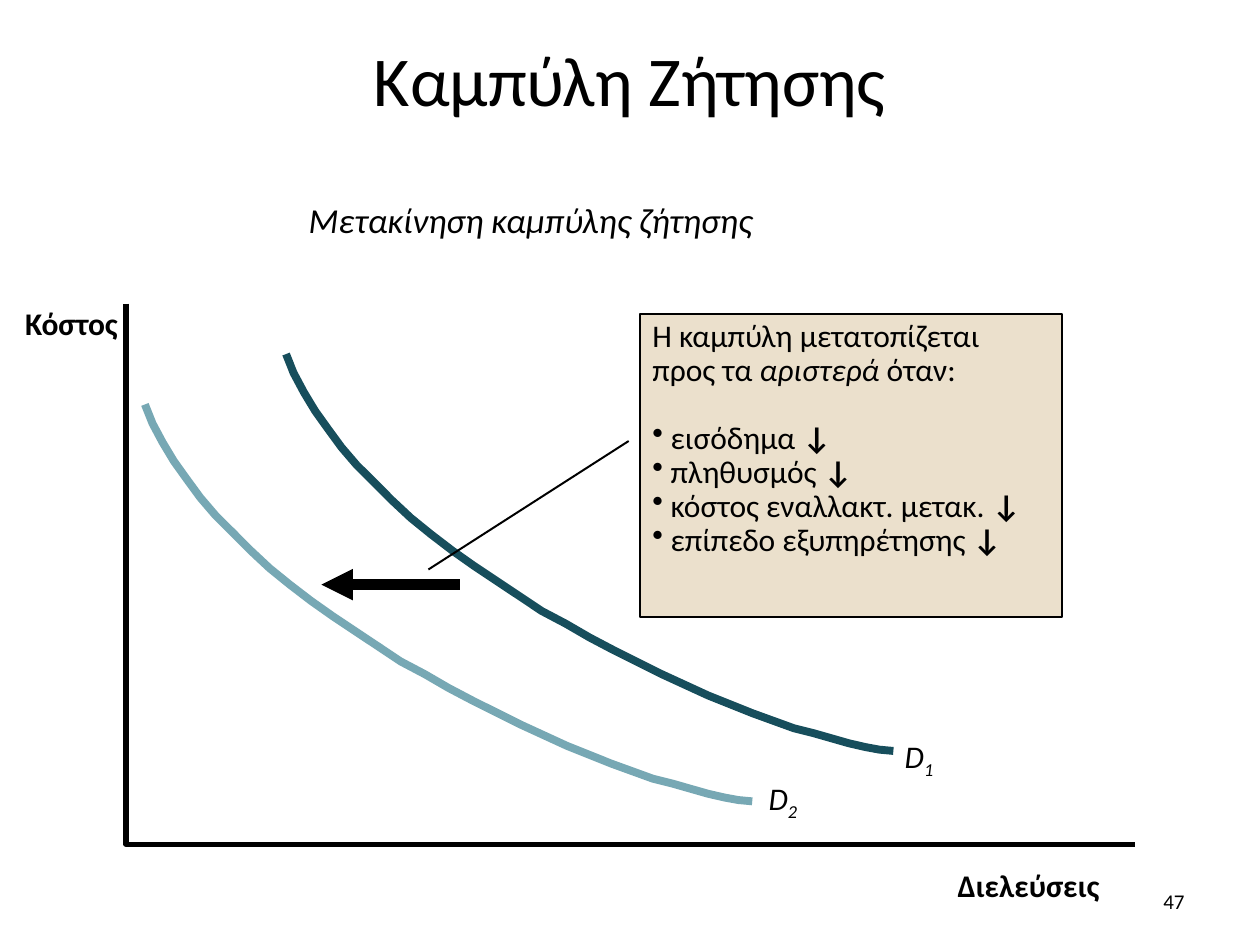
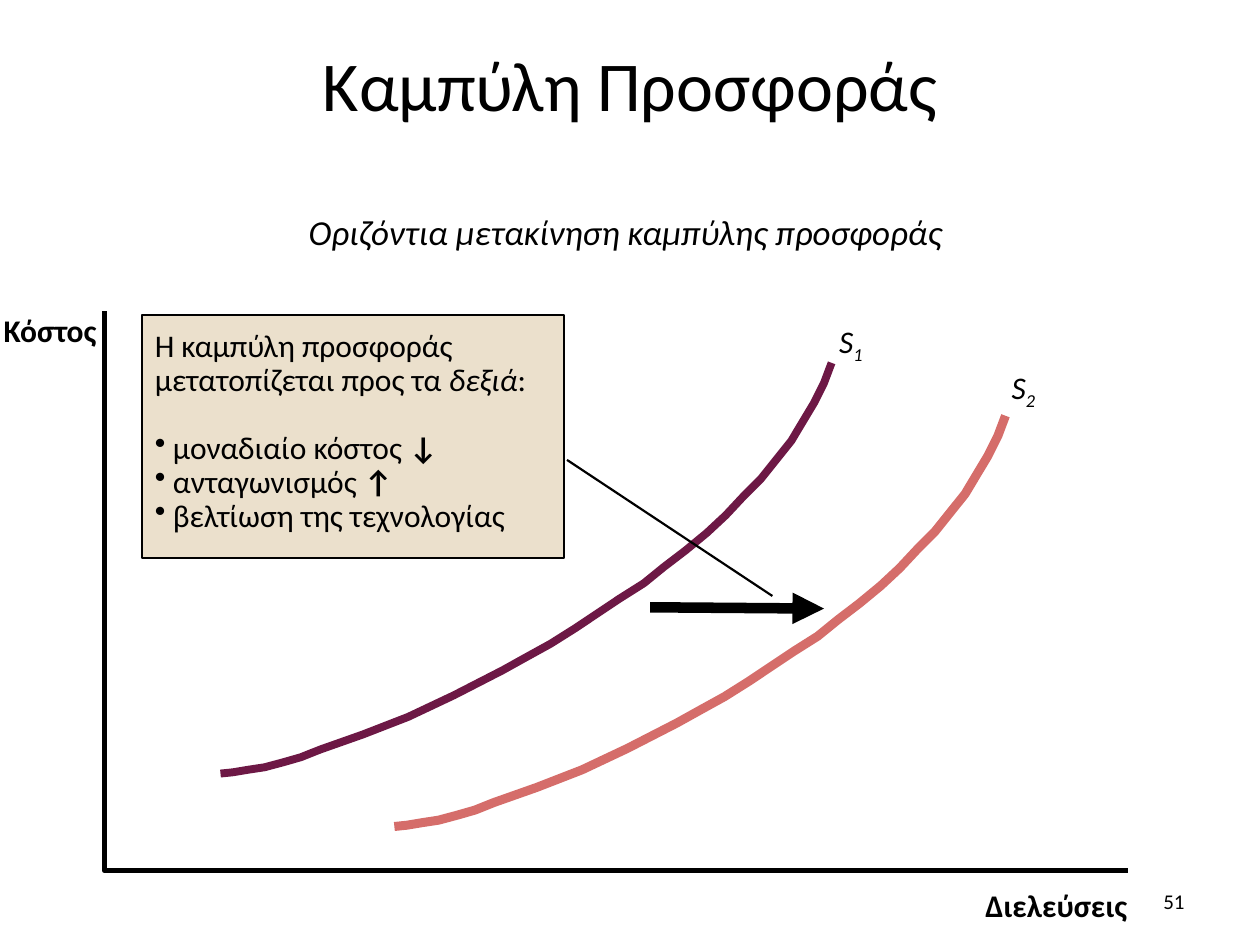
import pptx
import pptx.util
import pptx.dml.color
import pptx.enum.shapes
import pptx.enum.text
import pptx.oxml.ns
import lxml.etree

COLS, ROWS = 100, 75
FONT = "Calibri"
COLORS = {
    "ink": "000000",
    "note": "EBE0CC",
    "demand": "174E5C",
    "demand_shifted": "77A8B4",
    "supply": "6D1845",
    "supply_shifted": "D56D6A",
}
ALIGN = pptx.enum.text.PP_ALIGN
ANCHOR = pptx.enum.text.MSO_ANCHOR

# Curve outlines as (column, row) points
DEMAND = [
    (70.9, 59.6), (69.8, 59.5), (68.7, 59.3), (67.4, 59), (66, 58.6),
    (64.6, 58.2), (63, 57.8), (59.7, 56.6), (56.2, 55.2), (52.5, 53.5),
    (48.7, 51.6), (46.8, 50.6), (44.9, 49.5), (43, 48.5), (41.2, 47.3),
    (39.4, 46.1), (37.6, 44.9), (35.9, 43.7), (34.2, 42.4), (32.6, 41.1),
    (31.1, 39.7), (29.7, 38.3), (28.3, 36.9), (27.1, 35.5), (26, 34),
    (25, 32.6), (24.1, 31.1), (23.3, 29.6), (22.7, 28.1),
]
SUPPLY = [
    (17.5, 61.4), (18.5, 61.3), (19.7, 61.1), (21, 60.9), (22.5, 60.5),
    (23.9, 60.1), (25.4, 59.5), (28.8, 58.3), (32.4, 56.9), (36, 55.2),
    (39.9, 53.2), (41.7, 52.2), (43.7, 51.1), (45.6, 49.9), (47.4, 48.7),
    (49.2, 47.5), (51.1, 46.3), (52.7, 45), (54.4, 43.7), (56.1, 42.3),
    (57.6, 40.9), (59, 39.4), (60.4, 38), (61.6, 36.5), (62.8, 35),
    (63.7, 33.5), (64.6, 32), (65.4, 30.4), (66, 28.8),
]


def rgb(name):
    return pptx.dml.color.RGBColor.from_string(COLORS[name])


def sub(parent, tag, **attrs):
    return lxml.etree.SubElement(parent, pptx.oxml.ns.qn(tag), **attrs)


def add_run(p, text, size=18, bold=False, italic=False, subscript=False):
    r = p.add_run()
    r.text = text
    r.font.name, r.font.size = FONT, pptx.util.Pt(size)
    r.font.bold, r.font.italic = bold, italic
    r.font.color.rgb = rgb("ink")
    if subscript:
        r._r.get_or_add_rPr().set("baseline", "-25000")


class Deck:
    def __init__(self):
        self.prs = pptx.Presentation()
        self.prs.slide_width = pptx.util.Inches(10)
        self.prs.slide_height = pptx.util.Inches(7.5)
        self.s = None

    def x(self, cols):
        return round(self.prs.slide_width * cols / COLS)

    def y(self, rows):
        return round(self.prs.slide_height * rows / ROWS)

    def box(self, left, top, width, height):
        return self.x(left), self.y(top), self.x(width), self.y(height)

    def text(self, text, at, align=ALIGN.LEFT, anchor=ANCHOR.TOP,
             inset=(1, 0.5), wrap=True, **fmt):
        tf = self.s.shapes.add_textbox(*self.box(*at)).text_frame
        tf.word_wrap, tf.vertical_anchor = wrap, anchor
        tf.margin_left = tf.margin_right = self.x(inset[0])
        tf.margin_top = tf.margin_bottom = self.y(inset[1])
        p = tf.paragraphs[0]
        p.alignment = align
        add_run(p, text, **fmt)
        return p

    def label(self, text, left, top, width, **fmt):
        return self.text(text, (left, top, width, 3), inset=(0, 0), wrap=False, **fmt)

    def slide(self, title, title_top, subtitle, subtitle_top, number):
        self.s = self.prs.slides.add_slide(self.prs.slide_layouts[6])
        self.text(title, (0, title_top, COLS, 12.5), ALIGN.CENTER, ANCHOR.MIDDLE, size=40)
        self.text(subtitle, (23.5, subtitle_top, 55.9, 4.4), ALIGN.JUSTIFY,
                  size=20, italic=True)
        self.text(number, (71.7, 69.5, 23.3, 4), ALIGN.RIGHT, ANCHOR.MIDDLE, size=12)

    def polyline(self, points, color, width):
        pts = [(self.x(c), self.y(r)) for c, r in points]
        builder = self.s.shapes.build_freeform(*pts[0])
        builder.add_line_segments(pts[1:], close=False)
        sp = builder.convert_to_shape()
        sp.shadow.inherit = False
        sp.fill.background()
        sp.line.color.rgb, sp.line.width = rgb(color), pptx.util.Pt(width)

    def axes(self, left, top, right, bottom, flow_at):
        self.polyline([(left, top), (left, bottom), (right, bottom)], "ink", 3)
        self.label("Κόστος", left - 8, top, 7.4, bold=True)
        self.label("Διελεύσεις", *flow_at, 11.4, bold=True)

    def curve(self, points, color, name, index, name_at, shift=(0, 0), width=4.5):
        dx, dy = shift
        self.polyline([(c + dx, r + dy) for c, r in points], color, width)
        p = self.label(name, *name_at, 2.7, italic=True)
        add_run(p, index, italic=True, subscript=True)

    def line(self, start, end, width, arrow=False):
        (x1, y1), (x2, y2) = start, end
        c = self.s.shapes.add_connector(
            pptx.enum.shapes.MSO_CONNECTOR.STRAIGHT,
            self.x(x1), self.y(y1), self.x(x2), self.y(y2))
        c.line.color.rgb, c.line.width = rgb("ink"), pptx.util.Pt(width)
        if arrow:
            sub(c.line._get_or_add_ln(), "a:tailEnd", type="triangle")
        sub(c._element.spPr, "a:effectLst")

    def note(self, at, lead, bullets, inset_top):
        """lead is (before, italic word, after); bullets are (text, arrow)."""
        sp = self.s.shapes.add_shape(
            pptx.enum.shapes.MSO_SHAPE.RECTANGLE, *self.box(*at))
        sp.shadow.inherit = False
        sp.fill.solid()
        sp.fill.fore_color.rgb = rgb("note")
        sp.line.color.rgb, sp.line.width = rgb("ink"), pptx.util.Pt(1.13)
        tf = sp.text_frame
        tf.word_wrap, tf.vertical_anchor = True, ANCHOR.TOP
        tf.margin_left = tf.margin_right = self.x(1)
        tf.margin_top = self.y(inset_top)
        p = tf.paragraphs[0]
        p.alignment, p.line_spacing = ALIGN.LEFT, 0.9
        for i, part in enumerate(lead):
            add_run(p, part, italic=i == 1)
        for i, (text, arrow) in enumerate(bullets):
            p = tf.add_paragraph()
            p.alignment, p.line_spacing = ALIGN.LEFT, 0.9
            if i == 0:
                p.space_before = pptx.util.Pt(19.5)
            pPr = p._p.get_or_add_pPr()
            indent = self.x(1.44)
            pPr.set("marL", str(indent))
            pPr.set("indent", str(-indent))
            sub(pPr, "a:buChar", char="•")
            add_run(p, text + " " if arrow else text)
            if arrow:
                add_run(p, arrow, bold=True)


def main():
    deck = Deck()

    # Demand curve shifting left
    deck.slide("Καμπύλη Ζήτησης", 0, "Mετακίνηση καμπύλης ζήτησης", 15.3, "47")
    deck.axes(10, 24.1, 90.1, 67, flow_at=(76, 68.7))
    deck.curve(DEMAND, "demand", "D", "1", (71.8, 58.5))
    deck.curve(DEMAND, "demand_shifted", "D", "2", (61, 61.8), shift=(-11.2, 4))
    deck.line((36.5, 46.4), (25.5, 46.4), 6, arrow=True)
    deck.line((34, 45.2), (49.9, 35), 1.13)
    deck.note((50.8, 24.9, 33.5, 24.1),
              ("Η καμπύλη μετατοπίζεται προς τα ", "αριστερά", " όταν:"),
              [("εισόδημα", "↓"), ("πληθυσμός", "↓"),
               ("κόστος εναλλακτ. μετακ.", "↓"), ("επίπεδο εξυπηρέτησης", "↓")],
              inset_top=0.5)

    # Supply curve shifting right
    deck.slide("Καμπύλη Προσφοράς", 0.4,
               "Οριζόντια μετακίνηση καμπύλης προσφοράς", 16.2, "51")
    deck.axes(8.3, 24.7, 89.5, 69.1, flow_at=(78.2, 70.3))
    deck.curve(SUPPLY, "supply", "S", "1", (66.6, 25.6))
    deck.curve(SUPPLY, "supply_shifted", "S", "2", (80.3, 29.2),
               shift=(13.8, 4.2), width=5.13)
    deck.line((51.6, 48.2), (65.4, 48.3), 6, arrow=True)
    deck.line((45, 36.5), (61.3, 47.3), 1.25)
    deck.note((11.3, 25, 33.5, 19.3),
              ("Η καμπύλη προσφοράς μετατοπίζεται προς τα ", "δεξιά", ":"),
              [("μοναδιαίο κόστος", "↓"), ("ανταγωνισμός", "↑"),
               ("βελτίωση της τεχνολογίας", "")],
              inset_top=1.2)

    deck.prs.save("out.pptx")


if __name__ == "__main__":
    main()
